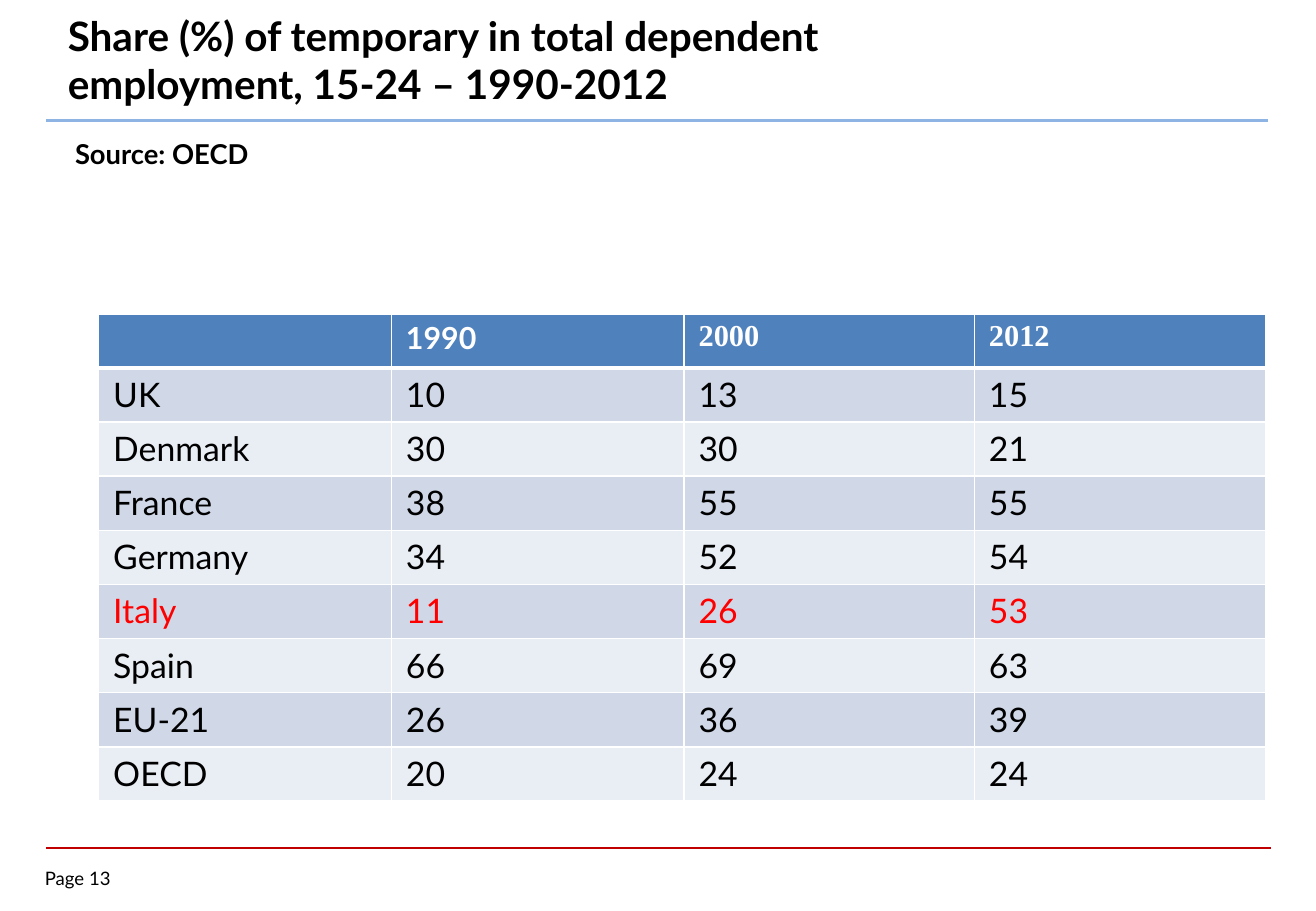
from dataclasses import dataclass

from lxml import etree
from pptx import Presentation
from pptx.dml.color import RGBColor
from pptx.enum.shapes import MSO_CONNECTOR
from pptx.enum.text import MSO_ANCHOR
from pptx.oxml.ns import qn
from pptx.slide import Slide
from pptx.table import _Cell
from pptx.text.text import TextFrame
from pptx.util import Pt

STRAIGHT = MSO_CONNECTOR.STRAIGHT
TOP, MIDDLE = MSO_ANCHOR.TOP, MSO_ANCHOR.MIDDLE


@dataclass(frozen=True)
class Theme:
    font: str = "Lato"
    year_font: str = "Times New Roman"
    black: str = "000000"
    white: str = "FFFFFF"
    highlight: str = "FF0000"
    header_fill: str = "4F81BD"
    odd_fill: str = "D0D8E8"
    even_fill: str = "E9EDF4"
    title_rule: str = "8EB4E3"
    footer_rule: str = "C00000"
    title_size: float = 24
    source_size: float = 16.2
    header_size: float = 18
    body_size: float = 20
    footer_size: float = 11


THEME = Theme()


@dataclass(frozen=True)
class Rule:
    left: float
    right: float
    y: float
    color: str
    width: float


@dataclass(frozen=True)
class Label:
    text: str
    left: float
    top: float
    width: float
    height: float
    size: float
    bold: bool = True
    anchor: MSO_ANCHOR = TOP
    inset_x: float = 7.2
    inset_y: float = 3.6


RULES = [
    Rule(27.4, 753.1, 502.6, THEME.footer_rule, 1),
    Rule(27.4, 751.7, 71.3, THEME.title_rule, 1.5),
]

LABELS = [
    Label("Page 13", 26.6, 514.1, 52.6, 15.8, THEME.footer_size,
          bold=False, inset_x=0, inset_y=0),
    Label("Source: OECD", 37.4, 77, 740.2, 28.1, THEME.source_size, anchor=MIDDLE),
    Label("Share (%) of temporary in total dependent employment, 15-24 – 1990-2012",
          33.1, 2.9, 550.1, 65.5, THEME.title_size),
]

YEARS = ["", "1990", "2000", "2012"]
SHARES = {
    "UK": (10, 13, 15),
    "Denmark": (30, 30, 21),
    "France": (38, 55, 55),
    "Germany": (34, 52, 54),
    "Italy": (11, 26, 53),
    "Spain": (66, 69, 63),
    "EU-21": (26, 36, 39),
    "OECD": (20, 24, 24),
}
HIGHLIGHTED = "Italy"
TABLE_LEFT, TABLE_TOP, ROW_HEIGHT = 58.5, 186, 32.1
COLUMN_WIDTHS = [173.5, 173.5, 172.1, 172.5]


def write(frame: TextFrame, text: str, size: float, color: str, bold: bool,
          font: str = THEME.font) -> None:
    frame.text = text
    for span in frame.paragraphs[0].runs:
        span.font.name = font
        span.font.size = Pt(size)
        span.font.bold = bold
        span.font.color.rgb = RGBColor.from_string(color)


def add_rule(page: Slide, rule: Rule) -> None:
    line = page.shapes.add_connector(
        STRAIGHT, Pt(rule.left), Pt(rule.y), Pt(rule.right), Pt(rule.y))
    line.line.color.rgb = RGBColor.from_string(rule.color)
    line.line.width = Pt(rule.width)
    etree.SubElement(line._element.spPr, qn("a:effectLst"))


def add_label(page: Slide, label: Label) -> None:
    box = page.shapes.add_textbox(
        Pt(label.left), Pt(label.top), Pt(label.width), Pt(label.height))
    frame = box.text_frame
    frame.word_wrap = True
    frame.vertical_anchor = label.anchor
    frame.margin_left = frame.margin_right = Pt(label.inset_x)
    frame.margin_top = frame.margin_bottom = Pt(label.inset_y)
    write(frame, label.text, label.size, THEME.black, label.bold)


def style_cell(cell: _Cell, fill: str, bottom_width: float) -> None:
    cell.margin_left = cell.margin_right = Pt(8.64)
    cell.margin_top = cell.margin_bottom = Pt(3.6)
    # Borders come before the fill in the cell properties
    properties = cell._tc.get_or_add_tcPr()
    for side in "LRTB":
        width = bottom_width if side == "B" else 1
        border = etree.SubElement(properties, qn(f"a:ln{side}"), w=str(Pt(width)))
        solid = etree.SubElement(border, qn("a:solidFill"))
        etree.SubElement(solid, qn("a:srgbClr"), val=THEME.white)
    cell.fill.solid()
    cell.fill.fore_color.rgb = RGBColor.from_string(fill)


def add_share_table(page: Slide) -> None:
    row_count = len(SHARES) + 1
    table = page.shapes.add_table(
        row_count, len(YEARS), Pt(TABLE_LEFT), Pt(TABLE_TOP),
        Pt(sum(COLUMN_WIDTHS)), Pt(ROW_HEIGHT * row_count)).table
    for column, width in zip(table.columns, COLUMN_WIDTHS):
        column.width = Pt(width)
    for row in table.rows:
        row.height = Pt(ROW_HEIGHT)

    # Header row
    for index, year in enumerate(YEARS):
        cell = table.cell(0, index)
        style_cell(cell, THEME.header_fill, 3)
        font = THEME.year_font if index > 1 else THEME.font
        write(cell.text_frame, year, THEME.header_size, THEME.white, True, font)

    # Country rows
    for row_index, (country, shares) in enumerate(SHARES.items(), start=1):
        fill = THEME.odd_fill if row_index % 2 else THEME.even_fill
        color = THEME.highlight if country == HIGHLIGHTED else THEME.black
        for index, value in enumerate((country, *shares)):
            cell = table.cell(row_index, index)
            style_cell(cell, fill, 1)
            write(cell.text_frame, str(value), THEME.body_size, color, False)


def main() -> None:
    deck = Presentation()
    deck.slide_width, deck.slide_height = Pt(780), Pt(540)
    page = deck.slides.add_slide(deck.slide_layouts[6])
    for rule in RULES:
        add_rule(page, rule)
    for label in LABELS:
        add_label(page, label)
    add_share_table(page)
    deck.save("out.pptx")


if __name__ == "__main__":
    main()
